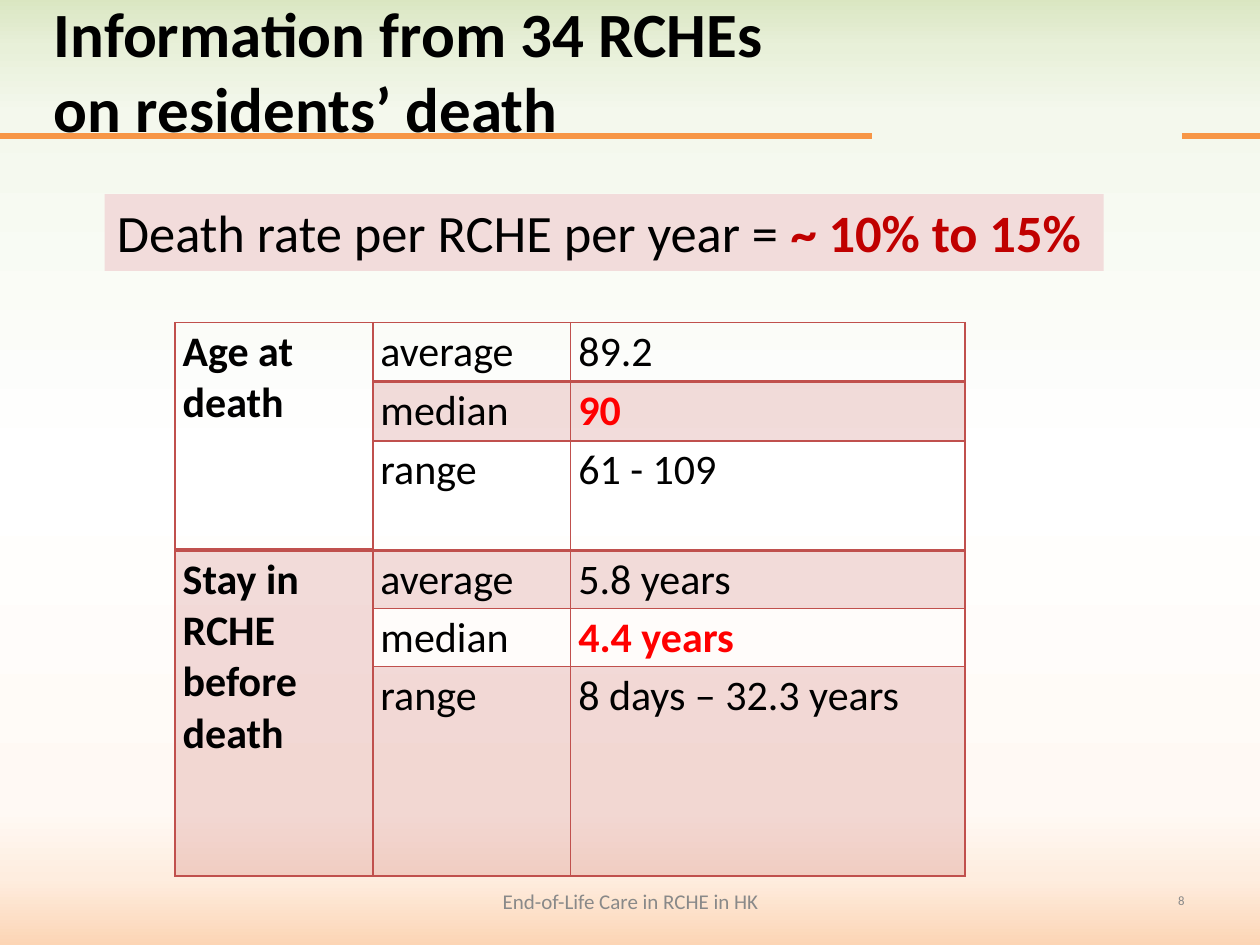
from dataclasses import dataclass

from lxml.etree import SubElement
from pptx import Presentation
from pptx.dml.color import RGBColor
from pptx.enum.shapes import MSO_CONNECTOR as Connector
from pptx.enum.shapes import MSO_SHAPE as Shape
from pptx.enum.text import MSO_ANCHOR as Anchor
from pptx.enum.text import MSO_AUTO_SIZE as AutoSize
from pptx.enum.text import PP_ALIGN as Align
from pptx.oxml.ns import qn
from pptx.util import Inches, Pt

FONT = "Calibri"
BLACK = RGBColor(0x00, 0x00, 0x00)
GRAY = RGBColor(0x89, 0x89, 0x89)
RED = RGBColor(0xFF, 0x00, 0x00)
DARK_RED = RGBColor(0xC0, 0x00, 0x00)
BRICK = RGBColor(0xC0, 0x50, 0x4D)
PINK = RGBColor(0xF2, 0xDC, 0xDB)
ORANGE = RGBColor(0xF7, 0x96, 0x46)
BACKDROP_STOPS = [
    (0, RGBColor(0xFC, 0xD5, 0xB5)),
    (7, RGBColor(0xFE, 0xED, 0xDF)),
    (14, RGBColor(0xFF, 0xF9, 0xF4)),
    (50, RGBColor(0xFF, 0xFF, 0xFF)),
    (87, RGBColor(0xF4, 0xF8, 0xED)),
    (94, RGBColor(0xE8, 0xF0, 0xD9)),
    (100, RGBColor(0xD7, 0xE4, 0xBD)),
]
COLUMN_WIDTHS = [1.57, 1.57, 3.13]
MEASURES = ["average", "median", "range"]


@dataclass
class Label:
    text: str
    left: float
    top: float
    width: float
    height: float
    size: float
    color: RGBColor
    align: Align
    bold: bool = False


@dataclass
class StatTable:
    heading: str
    values: list[str]
    top: float
    row_heights: list[float]
    tinted_rows: set[int]
    heavy_edge: str


LABELS = [
    Label("Information from 34 RCHEs \von residents’ death", 0.33, 0, 7.16, 1.11, 36, BLACK, Align.LEFT, True),
    Label("End-of-Life Care in RCHE in HK", 3.42, 6.95, 3.17, 0.4, 12, GRAY, Align.CENTER),
    Label("8", 7.17, 6.95, 2.33, 0.4, 7.3, GRAY, Align.RIGHT),
]
TABLES = [
    StatTable("Age at death", ["89.2", "90", "61 - 109"], 2.56, [0.47, 0.47, 0.47], {1}, "lnB"),
    StatTable(
        "Stay in RCHE before death",
        ["5.8 years", "4.4 years", "8 days – 32.3 years"],
        4.37, [0.41, 0.41, 0.66], {0, 2}, "lnT",
    ),
]


def set_font(font, size: float, color: RGBColor, bold: bool = False) -> None:
    font.name = FONT
    font.size = Pt(size)
    font.bold = bold
    font.color.rgb = color


def add_backdrop(slide) -> None:
    shape = slide.shapes.add_shape(Shape.RECTANGLE, 0, Inches(-0.08), Inches(10), Inches(7.58))
    shape.shadow.inherit = False
    shape.line.fill.background()
    shape.fill.gradient()
    gradient = shape._element.spPr.find(qn("a:gradFill"))
    stops = gradient.find(qn("a:gsLst"))
    for stop in list(stops):
        stops.remove(stop)
    for position, color in BACKDROP_STOPS:
        stop = SubElement(stops, qn("a:gs"), pos=str(position * 1000))
        SubElement(stop, qn("a:srgbClr"), val=str(color))
    gradient.find(qn("a:lin")).set("ang", str(270 * 60000))


def add_rule(slide, start: float, end: float) -> None:
    y = Inches(1.08)
    rule = slide.shapes.add_connector(Connector.STRAIGHT, Inches(start), y, Inches(end), y)
    rule.line.color.rgb = ORANGE
    rule.line.width = Pt(3)
    SubElement(rule._element.spPr, qn("a:effectLst"))


def add_label(slide, label: Label) -> None:
    box = slide.shapes.add_textbox(
        Inches(label.left), Inches(label.top), Inches(label.width), Inches(label.height)
    )
    frame = box.text_frame
    frame.word_wrap = True
    frame.vertical_anchor = Anchor.MIDDLE
    frame.text = label.text
    paragraph = frame.paragraphs[0]
    paragraph.alignment = label.align
    set_font(paragraph.font, label.size, label.color, label.bold)


def add_border(cell, edge: str, width: float) -> None:
    line = SubElement(cell._tc.get_or_add_tcPr(), qn(f"a:{edge}"), w=str(Pt(width)))
    fill = SubElement(line, qn("a:solidFill"))
    SubElement(fill, qn("a:srgbClr"), val=str(BRICK))


def style_cell(cell, tinted: bool, heavy_edge: str) -> None:
    cell.margin_left = cell.margin_right = Inches(0.06)
    cell.margin_top = cell.margin_bottom = Inches(0.03)
    for edge in ("lnL", "lnR", "lnT", "lnB"):
        add_border(cell, edge, 2 if edge == heavy_edge else 1)
    if tinted:
        cell.fill.solid()
        cell.fill.fore_color.rgb = BRICK
        color = cell._tc.tcPr.find(f"{qn('a:solidFill')}/{qn('a:srgbClr')}")
        SubElement(color, qn("a:alpha"), val="20000")
    else:
        cell.fill.background()


def write_cell(cell, text: str, color: RGBColor = BLACK, bold: bool = False) -> None:
    cell.text = text
    set_font(cell.text_frame.paragraphs[0].font, 24, color, bold)


def add_stat_table(slide, stats: StatTable) -> None:
    table = slide.shapes.add_table(
        len(MEASURES), len(COLUMN_WIDTHS), Inches(1.39), Inches(stats.top),
        Inches(sum(COLUMN_WIDTHS)), Inches(sum(stats.row_heights)),
    ).table
    table.first_row = table.horz_banding = False
    for column, width in zip(table.columns, COLUMN_WIDTHS):
        column.width = Inches(width)
    for row, height in zip(table.rows, stats.row_heights):
        row.height = Inches(height)
    for i, (measure, value) in enumerate(zip(MEASURES, stats.values)):
        for j in range(len(COLUMN_WIDTHS)):
            tint_row = 0 if j == 0 else i
            style_cell(table.cell(i, j), tint_row in stats.tinted_rows, stats.heavy_edge if i == 0 else "")
        is_median = measure == "median"
        write_cell(table.cell(i, 1), measure)
        write_cell(table.cell(i, 2), value, RED if is_median else BLACK, is_median)
    table.cell(0, 0).merge(table.cell(len(MEASURES) - 1, 0))
    write_cell(table.cell(0, 0), stats.heading, bold=True)


def add_death_rate(slide) -> None:
    box = slide.shapes.add_textbox(Inches(0.83), Inches(1.54), Inches(7.93), Inches(0.61))
    box.fill.solid()
    box.fill.fore_color.rgb = PINK
    frame = box.text_frame
    frame.word_wrap = False
    frame.auto_size = AutoSize.SHAPE_TO_FIT_TEXT
    paragraph = frame.paragraphs[0]
    for text, color, bold in [
        ("Death rate per RCHE per year = ", BLACK, False),
        ("~ 10% to 15%", DARK_RED, True),
    ]:
        run = paragraph.add_run()
        run.text = text
        set_font(run.font, 30, color, bold)


def main() -> None:
    presentation = Presentation()
    presentation.slide_width = Inches(10)
    presentation.slide_height = Inches(7.5)
    slide = presentation.slides.add_slide(presentation.slide_layouts[6])
    add_backdrop(slide)
    add_rule(slide, 9.38, 10)
    add_rule(slide, 0, 6.92)
    for label in LABELS:
        add_label(slide, label)
    for stats in TABLES:
        add_stat_table(slide, stats)
    add_death_rate(slide)
    presentation.save("out.pptx")


if __name__ == "__main__":
    main()
